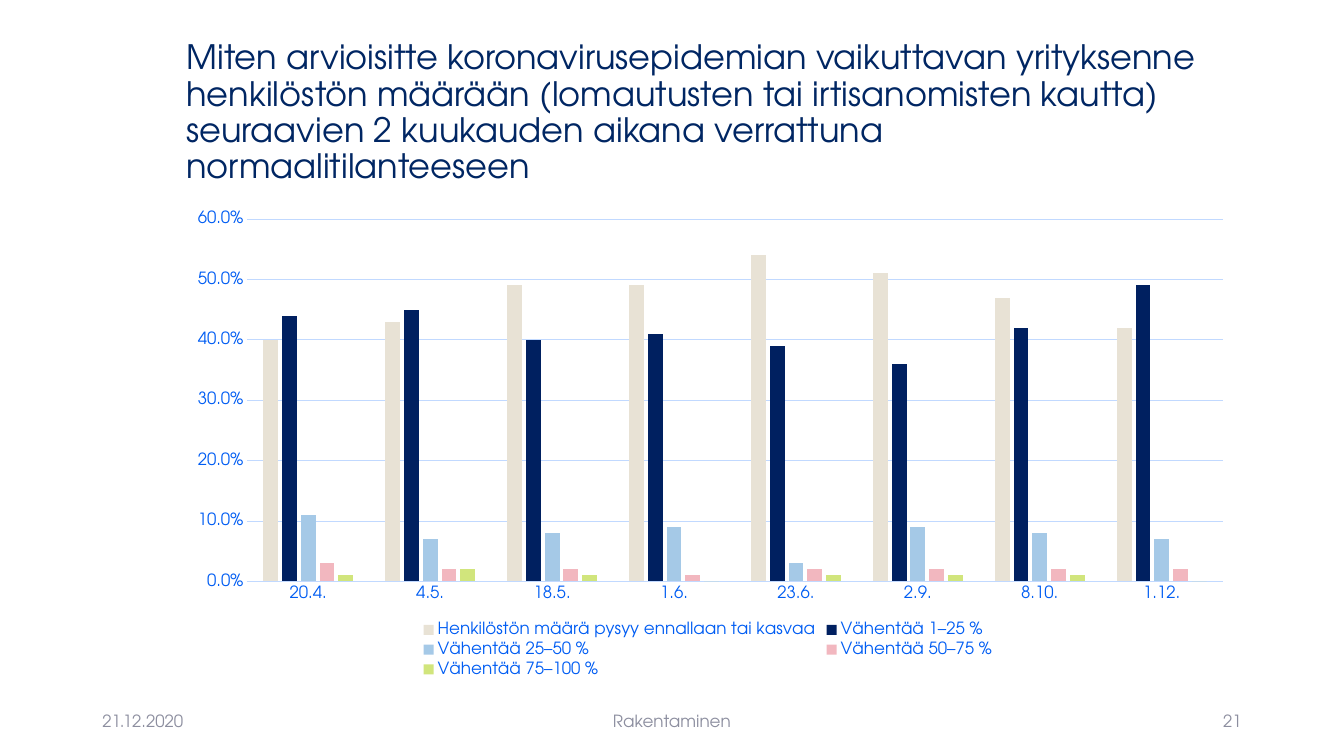
import pptx
import pptx.chart.data
import pptx.dml.color
import pptx.enum.chart
import pptx.enum.text
import pptx.util

RGBColor = pptx.dml.color.RGBColor
NAVY = RGBColor(0x00, 0x26, 0x63)
BLUE = RGBColor(0x00, 0x5D, 0xF3)
PALE_BLUE = RGBColor(0xC1, 0xD9, 0xFF)
GREY = RGBColor(0x8C, 0x8E, 0x9F)
SAND = RGBColor(0xE8, 0xE2, 0xD5)
DARK_BLUE = RGBColor(0x00, 0x20, 0x60)
SKY = RGBColor(0xA5, 0xC9, 0xE7)
PINK = RGBColor(0xF2, 0xB7, 0xBF)
LIME = RGBColor(0xD1, 0xE5, 0x7C)

FONT = "TeX Gyre Adventor"
COLUMNS, ROWS = 160, 150
ALIGN = pptx.enum.text.PP_ALIGN

TITLE = (
    "Miten arvioisitte koronavirusepidemian vaikuttavan yrityksenne "
    "henkilöstön määrään (lomautusten tai irtisanomisten kautta) "
    "seuraavien 2 kuukauden aikana verrattuna normaalitilanteeseen"
)
SURVEY_DATES = ["20.4.", "4.5.", "18.5.", "1.6.", "23.6.", "2.9.", "8.10.", "1.12."]
ANSWER_SHARES = [
    ("Henkilöstön määrä pysyy ennallaan tai kasvaa", SAND,
     [0.4, 0.43, 0.49, 0.49, 0.54, 0.51, 0.47, 0.42]),
    ("Vähentää 1–25 % ", DARK_BLUE,
     [0.44, 0.45, 0.4, 0.41, 0.39, 0.36, 0.42, 0.49]),
    ("Vähentää 25–50 % ", SKY,
     [0.11, 0.07, 0.08, 0.09, 0.03, 0.09, 0.08, 0.07]),
    ("Vähentää 50–75 % ", PINK,
     [0.03, 0.02, 0.02, 0.01, 0.02, 0.02, 0.02, 0.02]),
    ("Vähentää 75–100 % ", LIME,
     [0.01, 0.02, 0.01, 0, 0.01, 0.01, 0.01, 0]),
]
FOOTERS = [
    ("21.12.2020", 11, 36, ALIGN.LEFT),
    ("Rakentaminen", 53, 54, ALIGN.CENTER),
    ("21", 113, 36, ALIGN.RIGHT),
]


def format_font(font, size, color):
    font.name = FONT
    font.size = pptx.util.Pt(size)
    font.bold = False
    font.color.rgb = color


def write_text(shape, text, size=12, color=GREY, align=ALIGN.LEFT, spacing=1.0):
    frame = shape.text_frame
    frame.text = text
    frame.word_wrap = True
    frame.auto_size = pptx.enum.text.MSO_AUTO_SIZE.NONE
    frame.vertical_anchor = pptx.enum.text.MSO_ANCHOR.MIDDLE
    paragraph = frame.paragraphs[0]
    paragraph.alignment = align
    paragraph.line_spacing = spacing
    format_font(paragraph.runs[0].font, size, color)


class SurveySlide:
    def __init__(self, presentation):
        self.column = presentation.slide_width / COLUMNS
        self.row = presentation.slide_height / ROWS
        self.slide = presentation.slides.add_slide(presentation.slide_layouts[5])

    def box(self, left, top, width, height):
        return (
            round(left * self.column), round(top * self.row),
            round(width * self.column), round(height * self.row),
        )

    def title(self, text, *place):
        shape = self.slide.shapes.title
        shape.left, shape.top, shape.width, shape.height = self.box(*place)
        write_text(shape, text, size=24, color=NAVY, spacing=0.9)

    def label(self, text, *place, align):
        shape = self.slide.shapes.add_textbox(*self.box(*place))
        write_text(shape, text, align=align)

    def column_chart(self, categories, answers, *place):
        data = pptx.chart.data.CategoryChartData(number_format="0.0%")
        data.categories = categories
        for name, color, values in answers:
            data.add_series(name, values)
        chart = self.slide.shapes.add_chart(
            pptx.enum.chart.XL_CHART_TYPE.COLUMN_CLUSTERED, *self.box(*place), data
        ).chart
        format_font(chart.font, 10, NAVY)
        chart.has_title = False
        chart.has_legend = True
        chart.legend.position = pptx.enum.chart.XL_LEGEND_POSITION.BOTTOM
        chart.legend.include_in_layout = False
        format_font(chart.legend.font, 12, BLUE)

        plot = chart.plots[0]
        plot.gap_width = 219
        plot.overlap = -27
        plot.vary_by_categories = False
        for series, (name, color, values) in zip(plot.series, answers):
            series.format.fill.solid()
            series.format.fill.fore_color.rgb = color
            series.invert_if_negative = False

        dates, shares = chart.category_axis, chart.value_axis
        for axis in (dates, shares):
            axis.major_tick_mark = pptx.enum.chart.XL_TICK_MARK.NONE
            axis.minor_tick_mark = pptx.enum.chart.XL_TICK_MARK.NONE
            format_font(axis.tick_labels.font, 12, BLUE)
        shares.minimum_scale = 0
        shares.maximum_scale = 0.6
        shares.major_unit = 0.1
        shares.has_major_gridlines = True
        shares.tick_labels.number_format = "0.0%"
        shares.tick_labels.number_format_is_linked = False
        shares.format.line.fill.background()
        for line in (dates.format.line, shares.major_gridlines.format.line):
            line.color.rgb = PALE_BLUE
            line.width = pptx.util.Pt(0.75)


def main():
    presentation = pptx.Presentation()
    presentation.slide_width = pptx.util.Inches(13.33)
    presentation.slide_height = pptx.util.Inches(7.5)
    survey = SurveySlide(presentation)
    survey.title(TITLE, 21, 8, 127.1, 29)
    for text, left, width, align in FOOTERS:
        survey.label(text, left, 139, width, 8, align=align)
    survey.column_chart(SURVEY_DATES, ANSWER_SHARES, 21, 40, 127.1, 95.2)
    presentation.save("out.pptx")


if __name__ == "__main__":
    main()
